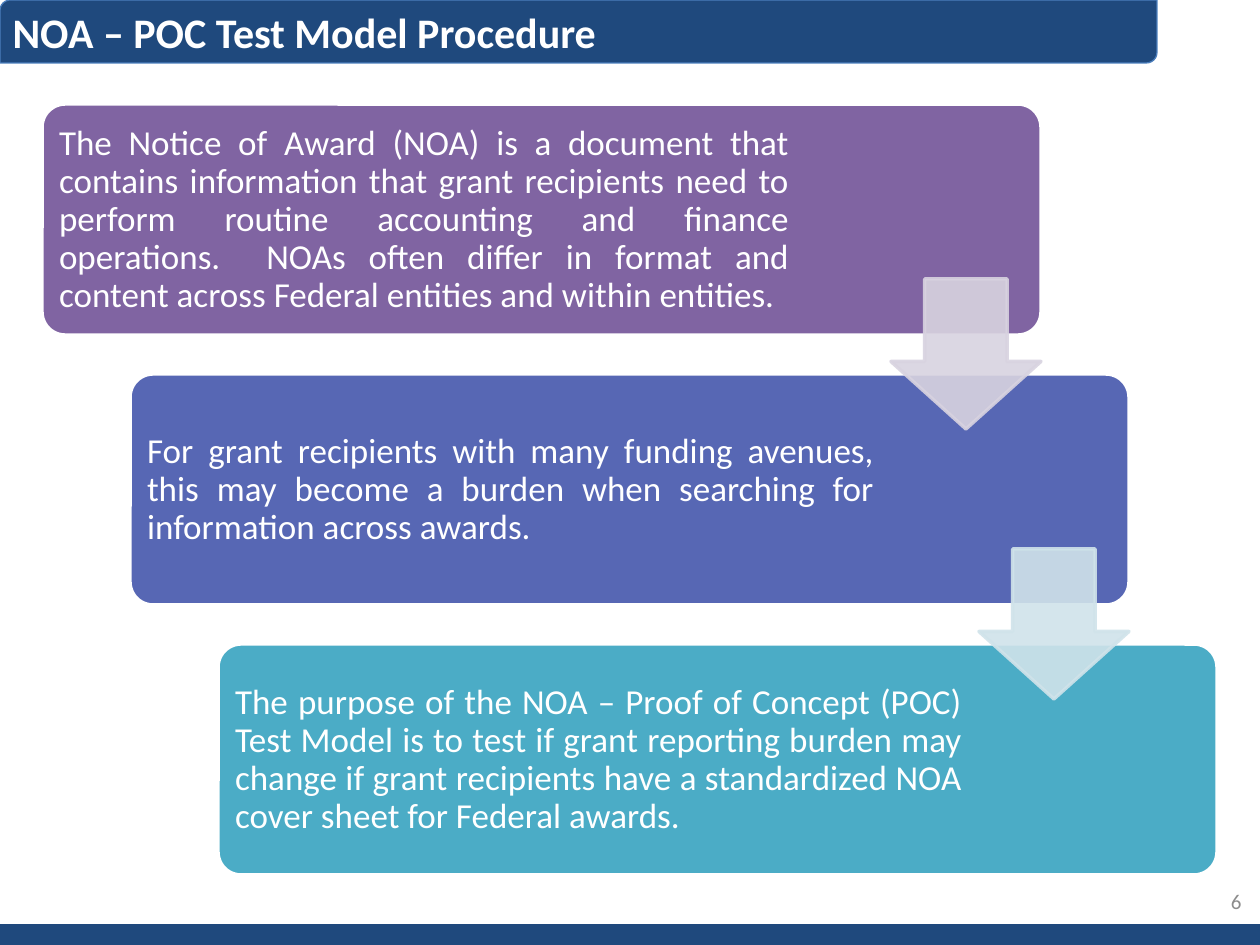
from lxml import etree
from pptx import Presentation
from pptx.dml.color import RGBColor
from pptx.enum.shapes import MSO_SHAPE
from pptx.enum.text import MSO_ANCHOR, PP_ALIGN
from pptx.oxml.ns import qn
from pptx.util import Pt

RECT = MSO_SHAPE.RECTANGLE
DIAGONAL = MSO_SHAPE.ROUND_2_DIAG_RECTANGLE
ROUNDED = MSO_SHAPE.ROUNDED_RECTANGLE
DOWN = MSO_SHAPE.DOWN_ARROW
TOP, MIDDLE = MSO_ANCHOR.TOP, MSO_ANCHOR.MIDDLE
LEFT, RIGHT, JUSTIFY = PP_ALIGN.LEFT, PP_ALIGN.RIGHT, PP_ALIGN.JUSTIFY

NAVY, WHITE, GRAY = "1F497D", "FFFFFF", "8C8C8C"
FONT = "Calibri"
STEPS = [  # box colour, text width, text
    ("8064A2", 750, "The Notice of Award (NOA) is a document that contains "
     "information that grant recipients need to perform routine accounting and "
     "finance operations.  NOAs often differ in format and content across "
     "Federal entities and within entities."),
    ("5767B4", 747, "For grant recipients with many funding avenues, this may "
     "become a burden when searching for information across awards."),
    ("4BACC6", 747, "The purpose of the NOA – Proof of Concept (POC) Test Model "
     "is to test if grant reporting burden may change if grant recipients have "
     "a standardized NOA cover sheet for Federal awards."),
]
ARROWS = ["D8D3E0", "D0E3EA"]


def px(n):
    return round(n * 914400 / 126)


def rgb(value):
    return RGBColor.from_string(value)


def add_box(s, kind, box, fill, line=None, width=2, adj=()):
    sp = s.shapes.add_shape(kind, *map(px, box))
    sp.shadow.inherit = False
    for i, value in enumerate(adj):
        sp.adjustments[i] = value
    sp.fill.solid()
    sp.fill.fore_color.rgb = rgb(fill)
    if line:
        sp.line.color.rgb = rgb(line)
        sp.line.width = Pt(width)
    else:
        sp.line.fill.background()
    return sp


def write(sp, text, size, color, align, anchor=MIDDLE, bold=False):
    tf = sp.text_frame
    tf.word_wrap = True
    tf.vertical_anchor = anchor
    p = tf.paragraphs[0]
    p.text = text
    p.alignment = align
    p.font.name, p.font.size, p.font.bold = FONT, Pt(size), bold
    p.font.color.rgb = rgb(color)
    return tf


def add_header(s, box):
    x, y, w, h = box
    add_box(s, DIAGONAL, box, NAVY, "4B7EBC", 0.75)
    title = s.shapes.title
    title.left, title.top, title.width, title.height = map(px, (x, y, w - 23, h))
    write(title, "NOA – POC Test Model Procedure", 24, WHITE, LEFT, TOP, True)
    # Bring the title in front of its bar
    s.shapes._spTree.append(title._element)


def add_footer(s, box):
    x, y, w, h = box
    add_box(s, RECT, box, NAVY)
    number = s.shapes.add_textbox(*map(px, (x + w - 300, y - 48, 294, 50)))
    write(number, "6", 12, GRAY, RIGHT)


def add_step(s, box, fill, text_width, text):
    x, y, w, h = box
    add_box(s, ROUNDED, box, fill, WHITE, adj=[0.1])
    label = s.shapes.add_textbox(*map(px, (x + 7, y + 7, text_width, h - 13)))
    tf = write(label, text, 20, WHITE, JUSTIFY)
    tf.margin_left = tf.margin_right = tf.margin_top = tf.margin_bottom = px(10)
    tf.paragraphs[0].line_spacing = 0.9
    tf.paragraphs[0].space_after = Pt(7)


def add_arrow(s, box, color):
    sp = add_box(s, DOWN, box, color, color)
    # python-pptx orders the adjustments as shaft width, head length
    sp.adjustments[0], sp.adjustments[1] = 0.55, 0.45
    for clr in sp._element.spPr.iter(qn("a:srgbClr")):
        etree.SubElement(clr, qn("a:alpha")).set("val", "90000")


def add_staircase(s, box):
    x, y, w, h = box
    dx, dy = 88, 270
    step_w, step_h = w - 2 * dx, h - 2 * dy
    for i, step in enumerate(STEPS):
        add_step(s, (x + i * dx, y + i * dy, step_w, step_h), *step)
    # Each arrow bridges the gap to the next step
    for i, color in enumerate(ARROWS):
        add_arrow(s, (x + 849 + i * dx, y + 175 + i * dy, 150, 150), color)


def main():
    prs = Presentation()
    prs.slide_width, prs.slide_height = px(1260), px(945)
    s = prs.slides.add_slide(prs.slide_layouts[5])
    add_header(s, (0, 0, 1157, 63))
    add_footer(s, (0, 924, 1260, 21))
    add_staircase(s, (42, 104, 1175, 771))
    prs.save("out.pptx")


if __name__ == "__main__":
    main()
